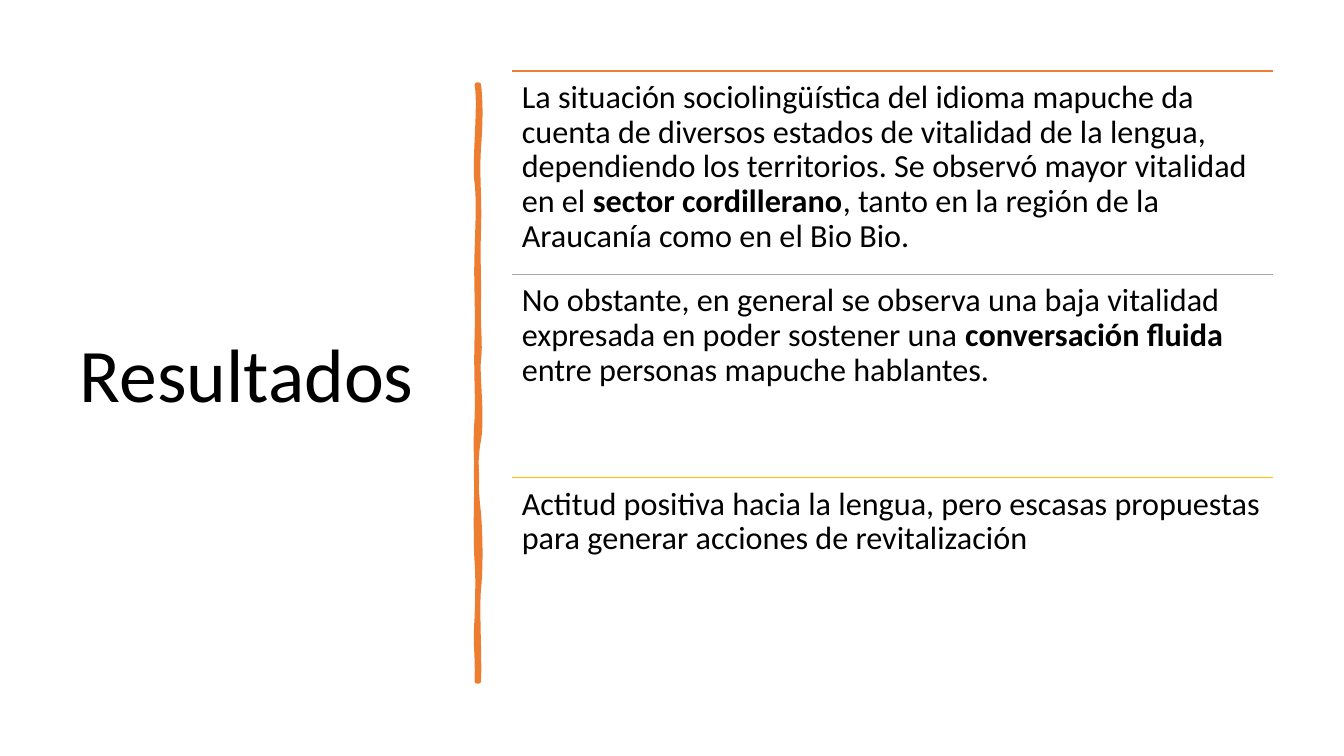
import pptx
import pptx.dml.color
import pptx.enum.shapes
import pptx.enum.text
import pptx.util
from lxml import etree

Pt = pptx.util.Pt
qn = pptx.oxml.ns.qn

TITLE = "Resultados"

# Each finding: rule colour name, then (text, bold) spans.
FINDINGS = [
    ("orange", [
        ("La situación sociolingüística del idioma mapuche da cuenta de diversos "
         "estados de vitalidad de la lengua, dependiendo los territorios. Se observó "
         "mayor vitalidad en el ", False),
        ("sector cordillerano", True),
        (", tanto en la región de la Araucanía como en el Bio Bio.", False),
    ]),
    ("gray", [
        ("No obstante, en general se observa una baja vitalidad expresada en poder "
         "sostener una ", False),
        ("conversación fluida ", True),
        ("entre personas mapuche hablantes.", False),
    ]),
    ("gold", [
        ("Actitud positiva hacia la lengua, pero escasas propuestas para generar "
         "acciones de revitalización", False),
    ]),
]

THEME = {
    "font": "Calibri",
    "title_size": 54,
    "body_size": 23,
    "line_spacing": 0.9,
    "black": "000000",
    "orange": "ED7D31",
    "gray": "A5A5A5",
    "gold": "FFC000",
}

PAGE_SIZE = (960, 540)
TITLE_BOX = (50, 50, 269.3, 439.9)
TITLE_MARGINS = (7.2, 3.6)
LIST_LEFT, LIST_TOP, LIST_WIDTH, ROW_HEIGHT = 365.8, 50.6, 543.6, 145.3
LIST_MARGINS = (6.9, 6.9)

# Hand-drawn divider: start point, then cubic curves (control, control, end).
STROKE_START = (342, 60.5)
STROKE_CURVES = [
    ((343.4, 73.4), (343.4, 85.7), (342, 105.1)),
    ((340.6, 124.6), (342.7, 140.4), (342, 162.7)),
    ((341.3, 185), (342, 188.6), (342, 211.7)),
    ((341.3, 234), (343.4, 246.2), (342, 256.3)),
    ((340.6, 266.4), (344.9, 298.1), (342, 313.9)),
    ((339.1, 329), (339.8, 348.5), (342, 367.2)),
    ((343.4, 385.9), (343.4, 406.1), (342, 420.5)),
    ((340.6, 434.2), (342.7, 468), (342, 486.7)),
    ((341.3, 486.7), (340.6, 486.7), (340.6, 486.7)),
    ((341.3, 465.1), (339.1, 463.7), (340.6, 441.4)),
    ((341.3, 419.8), (341.3, 410.4), (340.6, 401)),
    ((339.8, 391.7), (339.8, 356.4), (340.6, 343.4)),
    ((340.6, 330.5), (339.1, 320.4), (340.6, 298.8)),
    ((341.3, 277.9), (339.8, 268.6), (340.6, 241.2)),
    ((341.3, 214.6), (339.8, 202.3), (340.6, 180)),
    ((341.3, 157), (342, 144), (340.6, 130.3)),
    ((338.4, 117.4), (343.4, 74.9), (340.6, 60.5)),
]


def color(name):
    return pptx.dml.color.RGBColor.from_string(THEME[name])


def add_text(page, bounds, spans, size, anchor, margins):
    box = page.shapes.add_textbox(*map(Pt, bounds))
    frame = box.text_frame
    frame.word_wrap = True
    frame.vertical_anchor = anchor
    frame.margin_left = frame.margin_right = Pt(margins[0])
    frame.margin_top = frame.margin_bottom = Pt(margins[1])
    para = frame.paragraphs[0]
    para.line_spacing = THEME["line_spacing"]
    para.font.name = THEME["font"]
    para.font.size = Pt(size)
    para.font.color.rgb = color("black")
    for text, bold in spans:
        span = para.add_run()
        span.text = text
        if bold:
            span.font.bold = True


def bend_segments(shape, curves):
    """Turn each straight segment of a freeform into its cubic curve."""
    segments = list(shape._element.iter(qn("a:lnTo")))
    for segment, curve in zip(segments, curves):
        segment.tag = qn("a:cubicBezTo")
        segment.clear()
        for x, y in curve:
            etree.SubElement(segment, qn("a:pt"),
                             x=str(Pt(x) - shape.left), y=str(Pt(y) - shape.top))


def add_divider(page):
    builder = page.shapes.build_freeform(*map(Pt, STROKE_START), scale=1.0)
    ends = [tuple(map(Pt, curve[-1])) for curve in STROKE_CURVES]
    builder.add_line_segments(ends, close=True)
    divider = builder.convert_to_shape()
    bend_segments(divider, STROKE_CURVES)
    divider.shadow.inherit = False
    divider.fill.solid()
    divider.fill.fore_color.rgb = color("orange")
    divider.line.color.rgb = color("orange")
    divider.line.width = Pt(3.25)
    outline = divider._element.spPr.find(qn("a:ln"))
    etree.SubElement(outline, qn("a:round"))


def add_rule(page, top, color_name):
    rule = page.shapes.add_connector(
        pptx.enum.shapes.MSO_CONNECTOR.STRAIGHT,
        Pt(LIST_LEFT), Pt(top), Pt(LIST_LEFT + LIST_WIDTH), Pt(top))
    rule.line.color.rgb = color(color_name)
    rule.line.width = Pt(1)
    etree.SubElement(rule._element.spPr, qn("a:effectLst"))


def main():
    deck = pptx.Presentation()
    deck.slide_width, deck.slide_height = map(Pt, PAGE_SIZE)
    page = deck.slides.add_slide(deck.slide_layouts[6])
    anchors = pptx.enum.text.MSO_ANCHOR

    add_text(page, TITLE_BOX, [(TITLE, False)], THEME["title_size"],
             anchors.MIDDLE, TITLE_MARGINS)
    add_divider(page)
    for row, (color_name, spans) in enumerate(FINDINGS):
        top = LIST_TOP + row * ROW_HEIGHT
        add_rule(page, top, color_name)
        add_text(page, (LIST_LEFT, top, LIST_WIDTH, ROW_HEIGHT), spans,
                 THEME["body_size"], anchors.TOP, LIST_MARGINS)

    deck.save("out.pptx")


if __name__ == "__main__":
    main()
